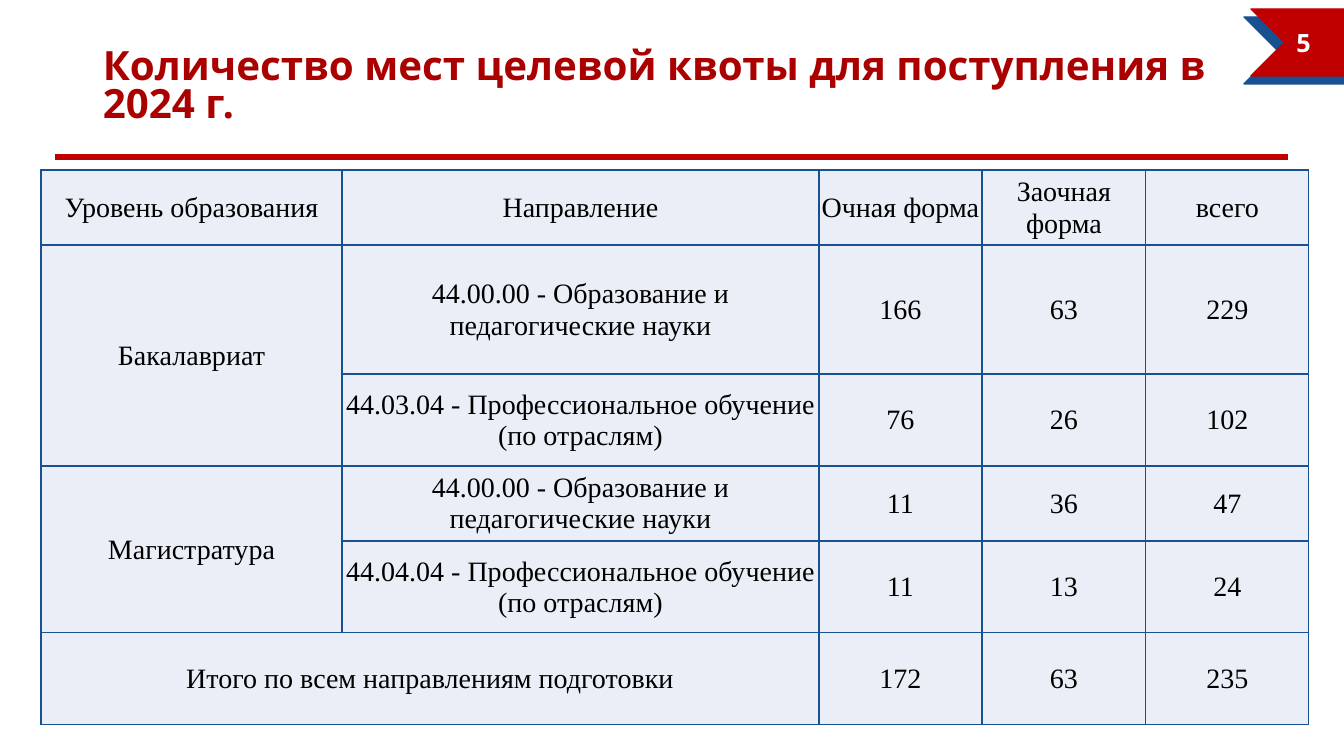
from lxml import etree
from pptx import Presentation
from pptx.dml.color import RGBColor
from pptx.enum.shapes import MSO_CONNECTOR as Connector, MSO_SHAPE as Preset
from pptx.enum.text import MSO_ANCHOR as Anchor, PP_ALIGN as Align
from pptx.oxml.ns import qn
from pptx.util import Emu, Pt

EMU_PER_INCH = 914400
PX_PER_INCH = 100.8

RED = RGBColor(0xC0, 0x00, 0x00)
TITLE_RED = RGBColor(0xAA, 0x00, 0x00)
BLUE = RGBColor(0x19, 0x50, 0x91)
PALE_BLUE = RGBColor(0xEA, 0xEF, 0xF7)
BLACK = RGBColor(0x00, 0x00, 0x00)
WHITE = RGBColor(0xFF, 0xFF, 0xFF)

HEADING_FONT = "Open Sans"
TABLE_FONT = "Times New Roman"

COLUMN_WIDTHS = [301, 477, 163, 164, 163]
ROW_HEIGHTS = [75, 129, 92, 75, 92, 92]
PEDAGOGY = "44.00.00 - Образование и педагогические науки"
QUOTA_ROWS = [
    ["Уровень образования", "Направление", "Очная форма", "Заочная форма", "всего"],
    ["Бакалавриат", PEDAGOGY, "166", "63", "229"],
    ["", "44.03.04 - Профессиональное обучение (по отраслям)", "76", "26", "102"],
    ["Магистратура", PEDAGOGY, "11", "36", "47"],
    ["", "44.04.04 - Профессиональное обучение (по отраслям)", "11", "13", "24"],
    ["Итого по всем направлениям подготовки", "", "172", "63", "235"],
]
MERGES = [((1, 0), (2, 0)), ((3, 0), (4, 0)), ((5, 0), (5, 1))]


def px(value):
    return Emu(round(value * EMU_PER_INCH / PX_PER_INCH))


def style_paragraph(paragraph, font_name, size, color, bold=False):
    paragraph.font.name = font_name
    paragraph.font.size = Pt(size)
    paragraph.font.color.rgb = color
    paragraph.font.bold = bold


def add_chevron(slide, left, top, color):
    shape = slide.shapes.add_shape(Preset.CHEVRON, px(left), px(top), px(174), px(67))
    shape.shadow.inherit = False
    shape.fill.solid()
    shape.fill.fore_color.rgb = color
    shape.line.color.rgb = color
    shape.line.width = Pt(1)


def add_rule(slide, left, right, top):
    connector = slide.shapes.add_connector(
        Connector.STRAIGHT, px(left), px(top), px(right), px(top))
    connector.line.color.rgb = RED
    connector.line.width = Pt(4.5)
    etree.SubElement(connector.element.spPr, qn("a:effectLst"))


def add_heading_text(slide, text, left, top, width, height, size, color, align):
    box = slide.shapes.add_textbox(px(left), px(top), px(width), px(height))
    frame = box.text_frame
    frame.word_wrap = True
    frame.vertical_anchor = Anchor.MIDDLE
    frame.text = text
    paragraph = frame.paragraphs[0]
    paragraph.alignment = align
    style_paragraph(paragraph, HEADING_FONT, size, color, bold=True)
    return paragraph


def add_cell_borders(cell):
    properties = cell._tc.get_or_add_tcPr()
    for side in ("a:lnL", "a:lnR", "a:lnT", "a:lnB"):
        line = etree.SubElement(properties, qn(side), w=str(Pt(1)))
        fill = etree.SubElement(line, qn("a:solidFill"))
        etree.SubElement(fill, qn("a:srgbClr"), val=str(BLUE))


def fill_cell(cell, text):
    add_cell_borders(cell)
    cell.fill.solid()
    cell.fill.fore_color.rgb = PALE_BLUE
    cell.margin_left = cell.margin_right = cell.margin_top = px(1)
    cell.margin_bottom = 0
    cell.vertical_anchor = Anchor.MIDDLE
    cell.text = text
    paragraph = cell.text_frame.paragraphs[0]
    paragraph.alignment = Align.CENTER
    style_paragraph(paragraph, TABLE_FONT, 20, BLACK)


def add_quota_table(slide, left, top):
    table = slide.shapes.add_table(
        len(ROW_HEIGHTS), len(COLUMN_WIDTHS), px(left), px(top),
        px(sum(COLUMN_WIDTHS)), px(sum(ROW_HEIGHTS))).table
    table.first_row = False
    table.horz_banding = False
    for column, width in zip(table.columns, COLUMN_WIDTHS):
        column.width = px(width)
    for row, height, texts in zip(table.rows, ROW_HEIGHTS, QUOTA_ROWS):
        row.height = px(height)
        for cell, text in zip(row.cells, texts):
            fill_cell(cell, text)
    for first, last in MERGES:
        table.cell(*first).merge(table.cell(*last))


def main():
    presentation = Presentation()
    presentation.slide_width = px(1344)
    presentation.slide_height = px(756)
    slide = presentation.slides.add_slide(presentation.slide_layouts[6])

    add_chevron(slide, 1244, 17, BLUE)
    add_rule(slide, 55, 1288, 157)
    add_chevron(slide, 1251, 9, RED)
    title = add_heading_text(
        slide, "Количество мест целевой квоты для поступления в 2024 г.",
        93, 53, 1159, 70, 28.8, TITLE_RED, Align.LEFT)
    title.line_spacing = 0.8
    add_heading_text(slide, "5", 1263, 22, 81, 40, 18, WHITE, Align.CENTER)
    add_quota_table(slide, 41, 170)

    presentation.save("out.pptx")


if __name__ == "__main__":
    main()
